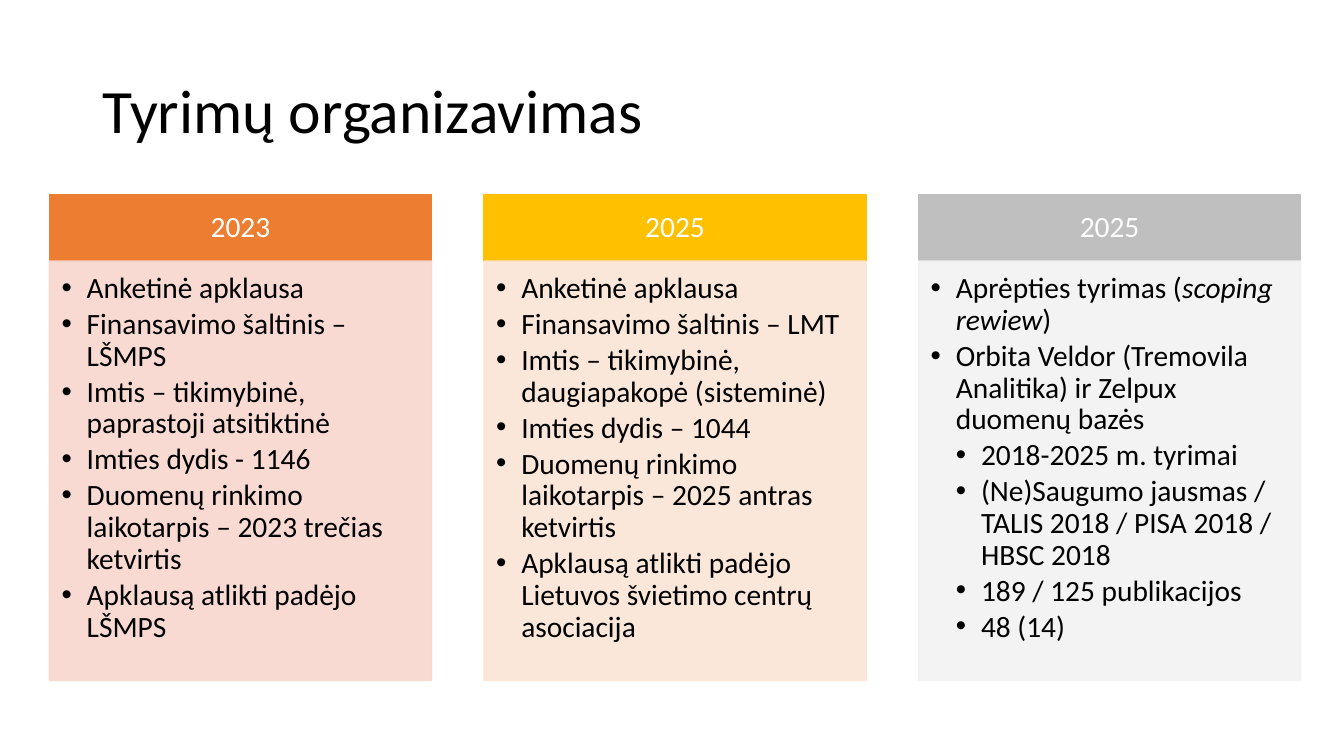
from lxml.etree import SubElement
from pptx import Presentation
from pptx.dml.color import RGBColor
from pptx.enum.shapes import MSO_SHAPE
from pptx.enum.text import MSO_ANCHOR, MSO_AUTO_SIZE, PP_ALIGN
from pptx.oxml.ns import qn
from pptx.util import Inches, Pt


def color(code):
    return RGBColor.from_string(code)


class Deck:
    font = "Calibri"
    size = 21
    dark = "000000"
    light = "FFFFFF"

    def __init__(self):
        self.show = Presentation()
        self.show.slide_width = Inches(13.33)
        self.show.slide_height = Inches(7.5)
        self.slide = self.show.slides.add_slide(self.show.slide_layouts[5])

    def style(self, para, size, code):
        para.line_spacing = 0.9
        for run in para.runs:
            run.font.name = self.font
            run.font.size = Pt(size)
            run.font.color.rgb = color(code)

    def title(self, text, left, top, width, height):
        shape = self.slide.shapes.title
        shape.left, shape.top = Inches(left), Inches(top)
        shape.width, shape.height = Inches(width), Inches(height)
        frame = shape.text_frame
        frame.text = text
        frame.word_wrap = True
        frame.auto_size = MSO_AUTO_SIZE.NONE
        frame.vertical_anchor = MSO_ANCHOR.MIDDLE
        para = frame.paragraphs[0]
        para.alignment = PP_ALIGN.LEFT
        self.style(para, 44, self.dark)

    def box(self, left, top, width, height, fill, pad, alpha=100):
        shape = self.slide.shapes.add_shape(
            MSO_SHAPE.RECTANGLE, Inches(left), Inches(top), Inches(width), Inches(height))
        shape.shadow.inherit = False
        shape.fill.solid()
        shape.fill.fore_color.rgb = color(fill)
        shape.line.color.rgb = color(fill)
        shape.line.width = Pt(1)
        if alpha < 100:
            for node in shape.element.spPr.iter(qn("a:srgbClr")):
                SubElement(node, qn("a:alpha"), val=str(alpha * 1000))
        frame = shape.text_frame
        frame.word_wrap = True
        (frame.margin_left, frame.margin_top,
         frame.margin_right, frame.margin_bottom) = map(Inches, pad)
        return frame

    def head(self, text, left, top, width, height, fill):
        frame = self.box(left, top, width, height, fill, (0.16, 0.09, 0.16, 0.09))
        frame.vertical_anchor = MSO_ANCHOR.MIDDLE
        frame.text = text
        para = frame.paragraphs[0]
        para.alignment = PP_ALIGN.CENTER
        self.style(para, self.size, self.light)

    def list(self, items, left, top, width, height, fill):
        frame = self.box(left, top, width, height, fill, (0.12, 0.12, 0.16, 0.18), 90)
        frame.vertical_anchor = MSO_ANCHOR.TOP
        for i, (level, text) in enumerate(items):
            para = frame.paragraphs[0] if i == 0 else frame.add_paragraph()
            self.bullet(para, level)
            # Text between asterisks is italic
            for j, part in enumerate(text.split("*")):
                run = para.add_run()
                run.text = part
                run.font.italic = j % 2 == 1
            para.alignment = PP_ALIGN.LEFT
            para.space_after = Pt(3)
            self.style(para, self.size, self.dark)

    def bullet(self, para, level):
        para.level = level
        props = para._p.get_or_add_pPr()
        props.set("marL", str(Inches(0.25 * level)))
        props.set("indent", str(Inches(-0.25)))
        SubElement(props, qn("a:buFont"), typeface="Arial")
        SubElement(props, qn("a:buChar"), char="•")


# Content: year, head fill, list fill, items with their level
COLUMNS = [
    ("2023", "ED7D31", "F8D7CE", [
        (1, "Anketinė apklausa"),
        (1, "Finansavimo šaltinis – LŠMPS"),
        (1, "Imtis – tikimybinė, paprastoji atsitiktinė"),
        (1, "Imties dydis - 1146"),
        (1, "Duomenų rinkimo laikotarpis – 2023 trečias ketvirtis"),
        (1, "Apklausą atlikti padėjo LŠMPS"),
    ]),
    ("2025", "FFC000", "FBE5D6", [
        (1, "Anketinė apklausa"),
        (1, "Finansavimo šaltinis – LMT"),
        (1, "Imtis – tikimybinė, daugiapakopė (sisteminė)"),
        (1, "Imties dydis – 1044"),
        (1, "Duomenų rinkimo laikotarpis – 2025 antras ketvirtis"),
        (1, "Apklausą atlikti padėjo Lietuvos švietimo centrų asociacija"),
    ]),
    ("2025", "BFBFBF", "F2F2F2", [
        (1, "Aprėpties tyrimas (*scoping rewiew*)"),
        (1, "Orbita Veldor (Tremovila Analitika) ir Zelpux duomenų bazės"),
        (2, "2018-2025 m. tyrimai"),
        (2, "(Ne)Saugumo jausmas / TALIS 2018 / PISA 2018 / HBSC 2018"),
        (2, "189 / 125 publikacijos"),
        (2, "48 (14)"),
    ]),
]

# Column grid
LEFT, TOP, WIDTH, GAP = 0.49, 1.93, 3.79, 0.52
HEAD, BODY = 0.66, 4.16


def main():
    deck = Deck()
    deck.title("Tyrimų organizavimas", 0.92, 0.4, 10.97, 1.45)
    for i, (year, strong, pale, items) in enumerate(COLUMNS):
        left = LEFT + i * (WIDTH + GAP)
        deck.head(year, left, TOP, WIDTH, HEAD, strong)
        deck.list(items, left, TOP + HEAD, WIDTH, BODY, pale)
    deck.show.save("out.pptx")


if __name__ == "__main__":
    main()
